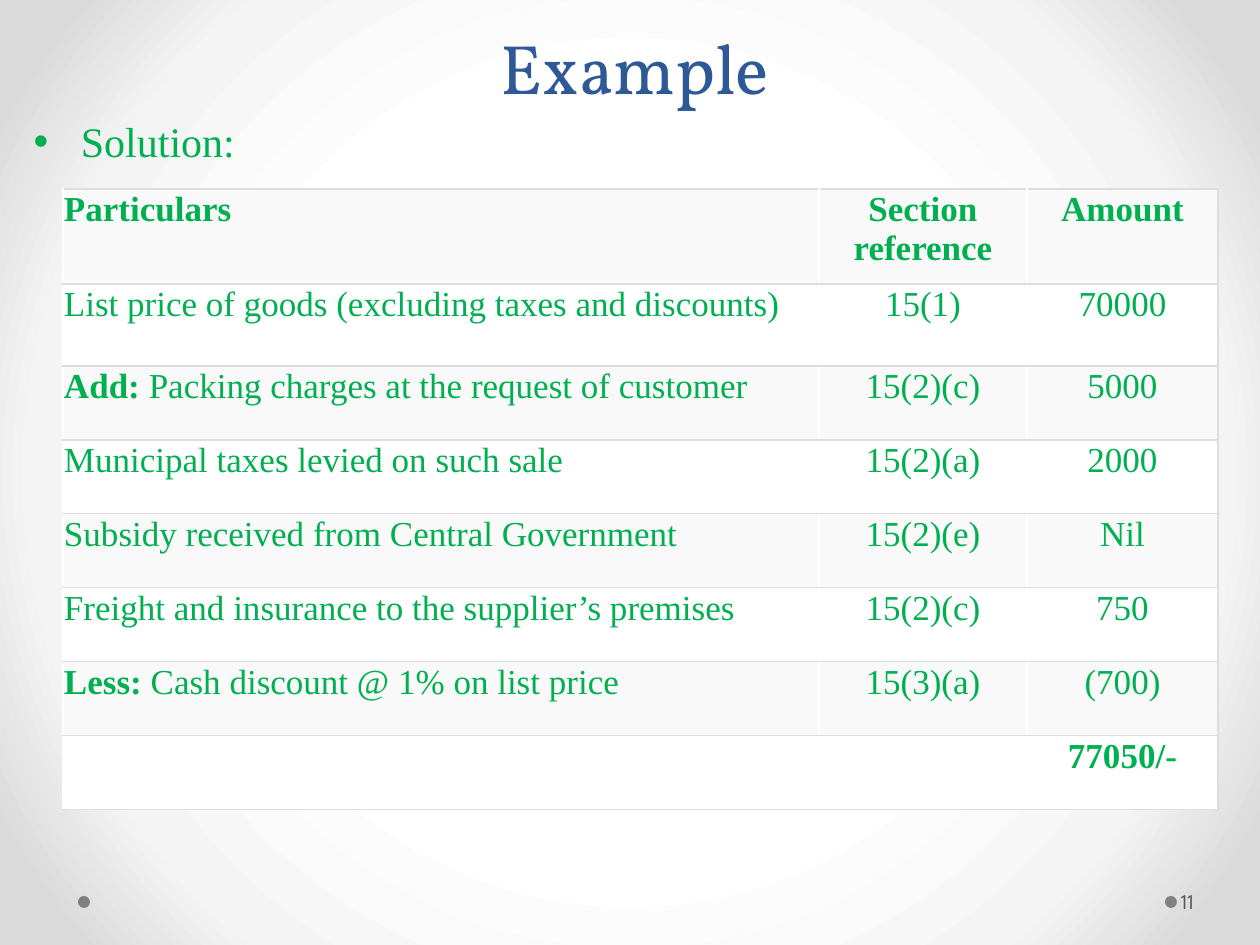
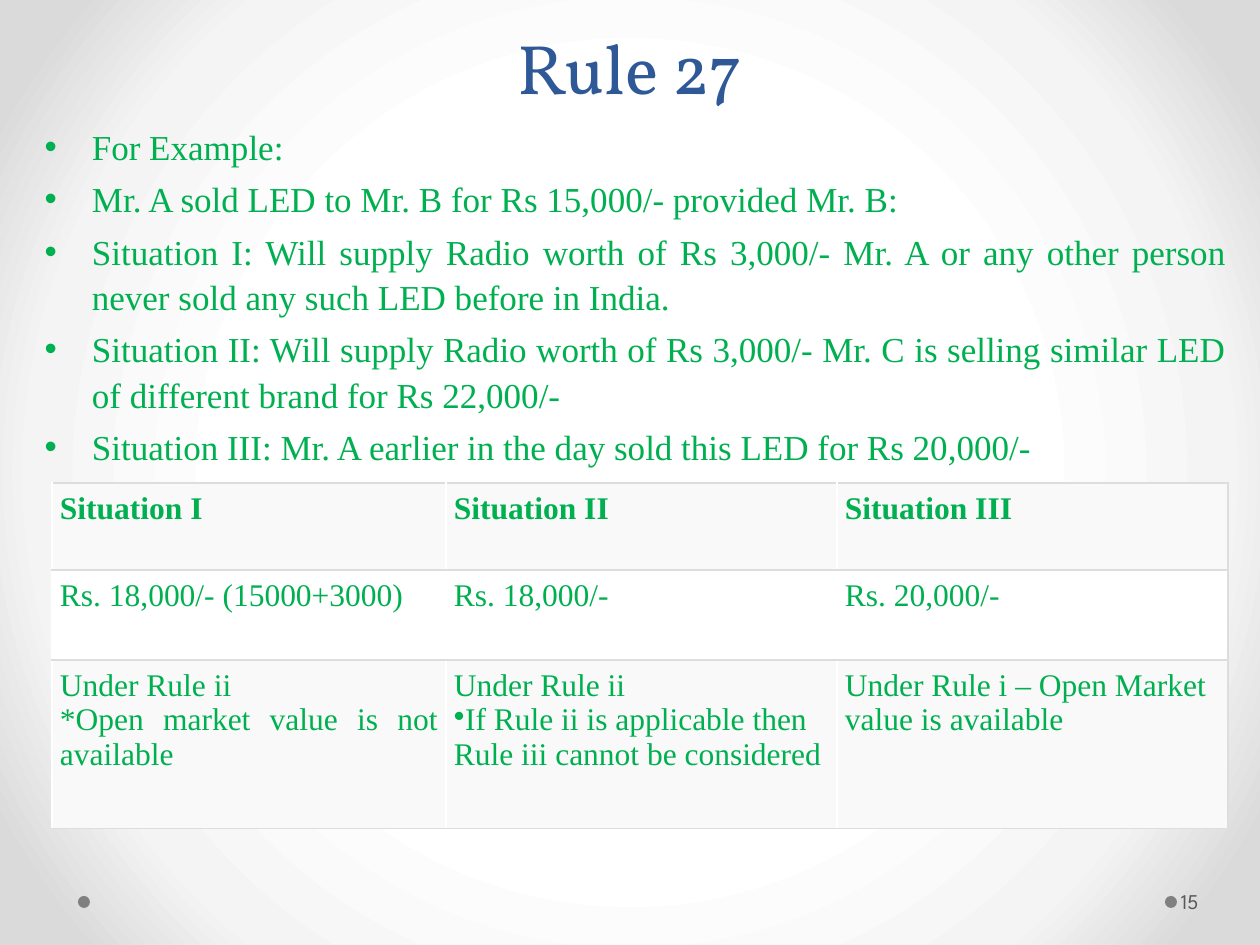
from pptx import Presentation
from pptx.dml.color import RGBColor
from pptx.enum.shapes import MSO_SHAPE as Shape
from pptx.enum.text import MSO_ANCHOR as Anchor, MSO_AUTO_SIZE as Fit, PP_ALIGN as Align
from pptx.oxml import parse_xml
from pptx.oxml.ns import nsdecls
from pptx.util import Emu, Pt

BLUE = RGBColor(0x2F, 0x58, 0x97)
GREEN = RGBColor(0x00, 0xB0, 0x50)
GREY = RGBColor(0x80, 0x80, 0x80)
DARK = RGBColor(0x59, 0x59, 0x59)
RULE = RGBColor(0xDD, 0xDD, 0xDD)
BANDS = RGBColor(0xF9, 0xF9, 0xF9), RGBColor(0xFF, 0xFF, 0xFF)
GLOW = (50, "FFFFFF"), (76, "F4F4F4"), (92, "DADADA")
SERIF, HEAD, SANS = "Times New Roman", "Vollkorn", "League Spartan"
WIDE, HIGH = 1260, 945

GOODS = [
    ["Particulars", "Section reference", "Amount"],
    ["List price of goods (excluding taxes and discounts)", "15(1)", "70000"],
    [("Add: ", "Packing charges at the request of customer"), "15(2)(c)", "5000"],
    ["Municipal taxes levied on such sale", "15(2)(a)", "2000"],
    ["Subsidy received from Central Government", "15(2)(e)", "Nil"],
    ["Freight and insurance to the supplier’s premises", "15(2)(c)", "750"],
    [("Less: ", "Cash discount @ 1% on list price"), "15(3)(a)", "(700)"],
    ["", "", ("77050/-", "")],
]
CASES = [
    "For Example:",
    "Mr. A sold LED to Mr. B for Rs 15,000/- provided Mr. B:",
    "Situation I: Will supply Radio worth of Rs 3,000/- Mr. A or any other person "
    "never sold any such LED before in India.",
    "Situation II: Will supply Radio worth of Rs 3,000/- Mr. C is selling similar LED "
    "of different brand for Rs 22,000/-",
    "Situation III: Mr. A earlier in the day sold this LED for Rs 20,000/-",
]
VALUES = [
    ["Situation I", "Situation II", "Situation III"],
    ["Rs. 18,000/- (15000+3000)", "Rs. 18,000/-", "Rs. 20,000/-"],
    ["Under Rule ii\n*Open market value is not available",
     "Under Rule ii\nIf Rule ii is applicable then Rule iii cannot be considered",
     "Under Rule i – Open Market value is available"],
]


def px(n):
    return Emu(round(n * 914400 / 126))


def place(item, box):
    item.left, item.top, item.width, item.height = map(px, box)


def style(para, face, size, color, align=None):
    para.font.name, para.font.size = face, Pt(size)
    para.font.color.rgb = color
    para.alignment = align


def backdrop(master):
    """Give the master its radial gradient."""
    stops = "".join(f'<a:gs pos="{at * 1000}"><a:srgbClr val="{color}"/></a:gs>'
                    for at, color in GLOW)
    master.background.fill.solid()
    solid = master.element.cSld.bg.bgPr[0]
    solid.getparent().replace(solid, parse_xml(
        f'<a:gradFill {nsdecls("a")} rotWithShape="1"><a:gsLst>{stops}</a:gsLst>'
        '<a:path path="circle"><a:fillToRect l="50000" t="50000" r="50000" b="50000"/>'
        '</a:path></a:gradFill>'))


def title(slide, text, box):
    head = slide.shapes.title
    place(head, box)
    frame = head.text_frame
    frame.text, frame.vertical_anchor, frame.auto_size = text, Anchor.BOTTOM, Fit.NONE
    para = frame.paragraphs[0]
    style(para, HEAD, 40, BLUE, Align.CENTER)
    para.line_spacing = Pt(58)


def bullets(slide, lines, box, size, align=None):
    body = slide.placeholders[1]
    place(body, box)
    frame = body.text_frame
    frame.text, frame.auto_size = "\n".join(lines), Fit.NONE
    for para in frame.paragraphs:
        style(para, SERIF, size, GREEN, align)
        para.line_spacing = 1.08


def footer(slide, number):
    for left in (78, 1165):
        dot = slide.shapes.add_shape(Shape.OVAL, px(left), px(896), px(12), px(12))
        dot.shadow.inherit = False
        dot.fill.solid()
        dot.fill.fore_color.rgb = GREY
        dot.line.fill.background()
    note = slide.shapes.add_textbox(px(1177), px(876), px(77), px(50))
    frame = note.text_frame
    frame.word_wrap, frame.vertical_anchor = True, Anchor.MIDDLE
    frame.margin_left = px(4)
    frame.text = str(number)
    style(frame.paragraphs[0], SANS, 12, DARK)


def border(cell):
    """Rule the right, top and bottom edges."""
    props = cell._tc.get_or_add_tcPr()
    for place_at, side in enumerate("RTB"):
        props.insert(place_at, parse_xml(
            f'<a:ln{side} {nsdecls("a")} w="9525"><a:solidFill><a:srgbClr val="{RULE}"/>'
            f'</a:solidFill></a:ln{side}>'))


def write(cell, text, size, align, bold):
    """Fill a cell; a pair holds a bold lead and a plain rest."""
    frame = cell.text_frame
    if isinstance(text, tuple):
        for part, heavy in zip(text, (True, False)):
            if part:
                run = frame.paragraphs[0].add_run()
                run.text, run.font.bold = part, heavy
    else:
        frame.text = text
    for para in frame.paragraphs:
        style(para, SERIF, size, GREEN, align)
        para.font.bold = bold


def grid(slide, data, spot, cols, rows, size, pad, aligns):
    frame = slide.shapes.add_table(len(rows), len(cols), *map(px, (*spot, sum(cols), sum(rows))))
    table = frame.table
    table.first_row = table.horz_banding = False
    for col, width in zip(table.columns, cols):
        col.width = px(width)
    for r, height in enumerate(rows):
        table.rows[r].height = px(height)
        for c, align in enumerate(aligns):
            cell = table.cell(r, c)
            cell.margin_left = cell.margin_right = px(pad)
            cell.margin_top = cell.margin_bottom = px(pad)
            cell.fill.solid()
            cell.fill.fore_color.rgb = BANDS[r % 2]
            border(cell)
            write(cell, data[r][c], size, align, r == 0)
    return table


def example(slide):
    title(slide, "Example", (21, 10, 1228, 105))
    bullets(slide, ["Solution:"], (21, 105, 1218, 787), 24)
    grid(slide, GOODS, (63, 189), [756, 208, 191], [95, 82] + [74] * 6, 20, 1,
         [Align.LEFT, Align.CENTER, Align.CENTER])
    footer(slide, 11)


def rule(slide):
    title(slide, "Rule 27", (21, 10, 1218, 105))
    bullets(slide, CASES, (32, 116, 1207, 798), 20, Align.JUSTIFY)
    table = grid(slide, VALUES, (52, 483), [394, 391, 391], [87, 90, 169], 18, 8,
                 [Align.LEFT] * 3)
    for para in table.cell(2, 0).text_frame.paragraphs:
        para.alignment = Align.JUSTIFY
    point = table.cell(2, 1).text_frame.paragraphs[1]
    point._p.get_or_add_pPr().insert(0, parse_xml(f'<a:buChar {nsdecls("a")} char="•"/>'))
    footer(slide, 15)


def main():
    deck = Presentation()
    deck.slide_width, deck.slide_height = px(WIDE), px(HIGH)
    backdrop(deck.slide_master)
    for build in (example, rule):
        build(deck.slides.add_slide(deck.slide_layouts[1]))
    deck.save("out.pptx")


if __name__ == "__main__":
    main()
